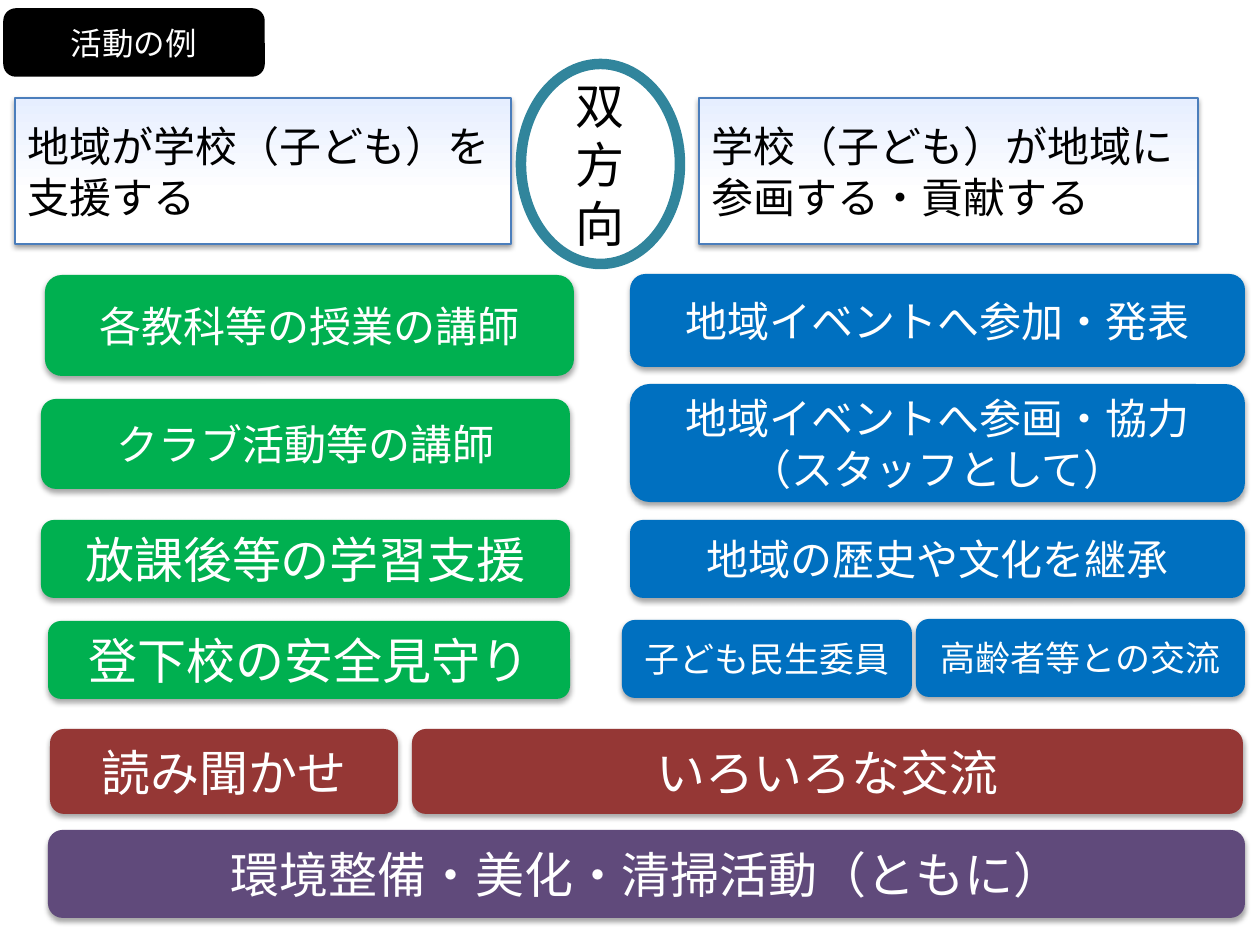
import pptx
import pptx.util
import pptx.dml.color
import pptx.enum.shapes
import pptx.enum.text
import pptx.oxml
import pptx.oxml.ns

SCALE = 914400 // 126
SHAPE = pptx.enum.shapes.MSO_SHAPE
ALIGN = pptx.enum.text.PP_ALIGN
LATIN = "Calibri"
CJK = "Noto Sans CJK JP"
WHITE, BLACK = "FFFFFF", "000000"
GREEN, BLUE, RED, PURPLE = "00B050", "0070C0", "953735", "604A7B"

ACTIVITIES = [
    (GREEN, 24, 45, 275, 529, 101, "各教科等の授業の講師"),
    (GREEN, 24, 41, 399, 529, 90, "クラブ活動等の講師"),
    (GREEN, 28, 41, 520, 529, 78, "放課後等の学習支援"),
    (GREEN, 28, 48, 621, 522, 78, "登下校の安全見守り"),
    (BLUE, 24, 630, 274, 615, 93, "地域イベントへ参加・発表"),
    (BLUE, 24, 630, 384, 615, 118, "地域イベントへ参画・協力\n（スタッフとして）"),
    (BLUE, 24, 630, 520, 615, 78, "地域の歴史や文化を継承"),
    (BLUE, 20, 622, 620, 290, 78, "子ども民生委員"),
    (BLUE, 20, 916, 619, 329, 78, "高齢者等との交流"),
    (RED, 28, 50, 729, 348, 85, "読み聞かせ"),
    (RED, 28, 412, 729, 831, 85, "いろいろな交流"),
    (PURPLE, 28, 48, 830, 1197, 88, "環境整備・美化・清掃活動（ともに）"),
]


def px(n):
    return pptx.util.Emu(n * SCALE)


def color(value):
    return pptx.dml.color.RGBColor.from_string(value)


def add_box(s, kind, x, y, w, h, fill=None, line=None, line_width=0):
    sp = s.shapes.add_shape(kind, px(x), px(y), px(w), px(h))
    sp.shadow.inherit = False
    if fill:
        sp.fill.solid()
        sp.fill.fore_color.rgb = color(fill)
    if line:
        sp.line.color.rgb = color(line)
        sp.line.width = pptx.util.Pt(line_width)
    else:
        sp.line.fill.background()
    return sp


def set_text(sp, text, size, font, ink, align):
    tf = sp.text_frame
    tf.word_wrap = True
    tf.vertical_anchor = pptx.enum.text.MSO_ANCHOR.MIDDLE
    tf.text = text
    for p in tf.paragraphs:
        p.alignment = align
        for r in p.runs:
            r.font.size = pptx.util.Pt(size)
            r.font.name = font
            r.font.color.rgb = color(ink)
            ea = pptx.oxml.parse_xml(
                f'<a:ea {pptx.oxml.ns.nsdecls("a")} typeface="{font}"/>')
            r.font._element.append(ea)


def add_shadow(sp, alpha, distance):
    effects = sp._element.spPr.find(pptx.oxml.ns.qn("a:effectLst"))
    effects.append(pptx.oxml.parse_xml(
        f'<a:outerShdw {pptx.oxml.ns.nsdecls("a")} blurRad="{pptx.util.Pt(3.1)}" '
        f'dist="{pptx.util.Pt(distance)}" dir="5400000" rotWithShape="0">'
        f'<a:srgbClr val="{BLACK}"><a:alpha val="{alpha * 1000}"/></a:srgbClr>'
        '</a:outerShdw>'))


def add_label(s):
    sp = add_box(s, SHAPE.ROUNDED_RECTANGLE, 5, 10, 258, 65, BLACK, BLACK, 2)
    set_text(sp, "活動の例", 18, LATIN, WHITE, ALIGN.CENTER)


def add_heading(s, x, w, text):
    sp = add_box(s, SHAPE.RECTANGLE, x, 98, w, 146, line="4B7EBC", line_width=0.75)
    sp.fill.gradient()
    sp.fill.gradient_angle = 90
    for stop, position, value in zip(sp.fill.gradient_stops, (0.35, 1), (WHITE, "E6EEFF")):
        stop.position = position
        stop.color.rgb = color(value)
    add_shadow(sp, 38, 1.6)
    set_text(sp, text, 24, CJK, BLACK, ALIGN.LEFT)


def add_two_way_oval(s):
    sp = add_box(s, SHAPE.OVAL, 521, 64, 159, 200, WHITE, "31859C", 6)
    set_text(sp, "双方向", 28, CJK, BLACK, ALIGN.CENTER)


def add_activity(s, fill, size, x, y, w, h, text):
    sp = add_box(s, SHAPE.ROUNDED_RECTANGLE, x, y, w, h, fill)
    add_shadow(sp, 35, 1.8)
    set_text(sp, text, size, LATIN, WHITE, ALIGN.CENTER)


def main():
    prs = pptx.Presentation()
    prs.slide_width, prs.slide_height = px(1260), px(945)
    s = prs.slides.add_slide(prs.slide_layouts[6])
    add_label(s)
    add_heading(s, 15, 496, "地域が学校（子ども）を支援する")
    add_heading(s, 699, 499, "学校（子ども）が地域に\n参画する・貢献する")
    add_two_way_oval(s)
    for activity in ACTIVITIES:
        add_activity(s, *activity)
    prs.save("out.pptx")


if __name__ == "__main__":
    main()
